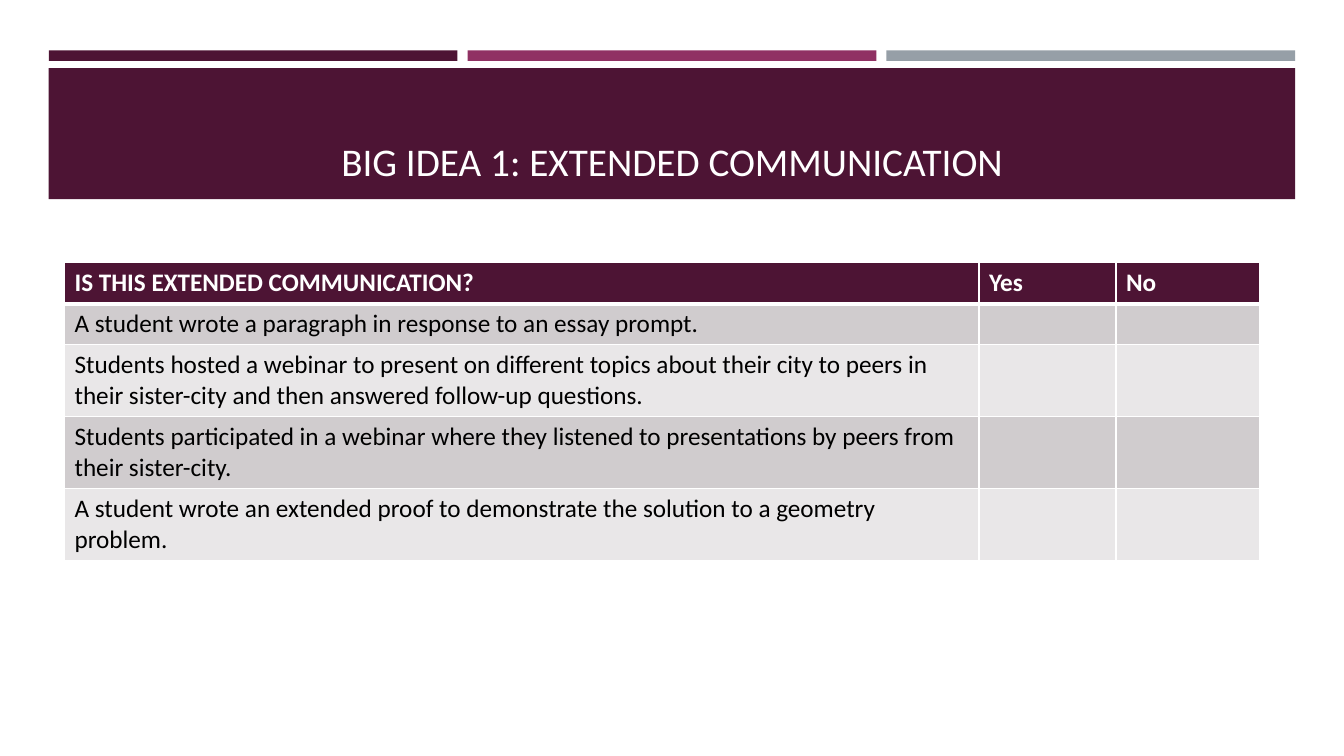
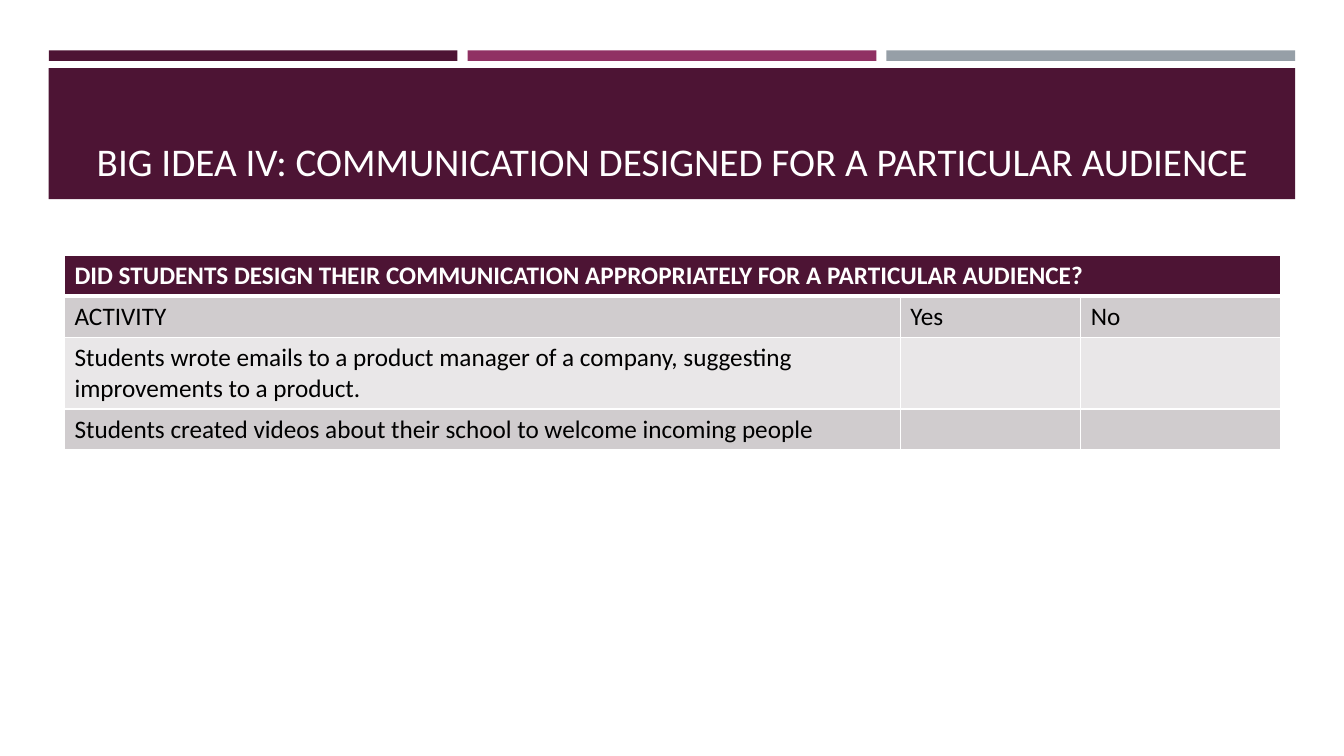
import dataclasses

import pptx
import pptx.dml.color
import pptx.enum.shapes
import pptx.enum.text
import pptx.oxml
import pptx.oxml.ns
import pptx.util


@dataclasses.dataclass(frozen=True)
class Theme:
    font: str = "Calibri"
    title_size: int = 28
    table_size: int = 18
    plum: str = "4D1434"
    magenta: str = "903163"
    slate: str = "969FA7"
    band_dark: str = "D0CCCE"
    band_light: str = "E9E7E8"
    white: str = "FFFFFF"
    black: str = "000000"
    thin_border: int = 1
    header_border: int = 3


theme = Theme()
rgb = pptx.dml.color.RGBColor.from_string

presentation = pptx.Presentation()
presentation.slide_width = pptx.util.Inches(13.33)
presentation.slide_height = pptx.util.Inches(7.5)

# The grid divides the slide into 100 columns and 100 rows.
COLUMN = presentation.slide_width / 100
ROW = presentation.slide_height / 100

BAND_LEFT = 3.63
BAND_WIDTH = 100 - 2 * BAND_LEFT
BAR_GAP = 0.75
BAR_WIDTH = (BAND_WIDTH - 2 * BAR_GAP) / 3
CONTENT_LEFT = 4.8
CONTENT_WIDTH = 100 - 2 * CONTENT_LEFT
LINE_HEIGHTS = {1: 5.43, 2: 9.5}

# Each table row holds its number of text lines and its cell texts.
slides = [
    {
        "title": "BIG IDEA 1: EXTENDED COMMUNICATION",
        "top": 34.75,
        "columns": [68.04, 10.2, 10.65],
        "rows": [
            (1, ["IS THIS EXTENDED COMMUNICATION?", "Yes", "No"]),
            (1, ["A student wrote a paragraph in response to an essay prompt."]),
            (2, ["Students hosted a webinar to present on different topics about their city "
                 "to peers in their sister-city and then answered follow-up questions."]),
            (2, ["Students participated in a webinar where they listened to presentations "
                 "by peers from their sister-city."]),
            (2, ["A student wrote an extended proof to demonstrate the solution to a "
                 "geometry problem."]),
        ],
    },
    {
        "title": "BIG IDEA IV: COMMUNICATION DESIGNED FOR A PARTICULAR AUDIENCE",
        "top": 33.75,
        "columns": [62.19, 13.43, 14.85],
        "rows": [
            (1, ["DID STUDENTS DESIGN THEIR COMMUNICATION APPROPRIATELY FOR A "
                 "PARTICULAR AUDIENCE?"]),
            (1, ["ACTIVITY", "Yes", "No"]),
            (2, ["Students wrote emails to a product manager of a company, suggesting "
                 "improvements to a product."]),
            (1, ["Students created videos about their school to welcome incoming people"]),
        ],
    },
]


def grid_box(left, top, width, height):
    """Turn grid columns and rows into slide lengths."""
    return int(left * COLUMN), int(top * ROW), int(width * COLUMN), int(height * ROW)


def style_cell(cell, row_index):
    is_header = row_index == 0
    properties = cell._tc.get_or_add_tcPr()
    for side in "LRTB":
        beside_header = (side == "B" and is_header) or (side == "T" and row_index == 1)
        points = theme.header_border if beside_header else theme.thin_border
        properties.append(pptx.oxml.parse_xml(
            f'<a:ln{side} {pptx.oxml.ns.nsdecls("a")} w="{pptx.util.Pt(points)}">'
            f'<a:solidFill><a:srgbClr val="{theme.white}"/></a:solidFill></a:ln{side}>'))
    band = theme.band_dark if row_index % 2 else theme.band_light
    cell.fill.solid()
    cell.fill.fore_color.rgb = rgb(theme.plum if is_header else band)
    font = cell.text_frame.paragraphs[0].font
    font.name = theme.font
    font.size = pptx.util.Pt(theme.table_size)
    font.bold = is_header
    font.color.rgb = rgb(theme.white if is_header else theme.black)


decorations = [
    (BAND_LEFT + index * (BAR_WIDTH + BAR_GAP), 6.67, BAR_WIDTH, 1.4, color)
    for index, color in enumerate([theme.plum, theme.magenta, theme.slate])
]
decorations.append((BAND_LEFT, 9, BAND_WIDTH, 17.33, theme.plum))

for content in slides:
    slide = presentation.slides.add_slide(presentation.slide_layouts[6])

    for *box, color in decorations:
        shape = slide.shapes.add_shape(
            pptx.enum.shapes.MSO_SHAPE.RECTANGLE, *grid_box(*box))
        shape.shadow.inherit = False
        shape.fill.solid()
        shape.fill.fore_color.rgb = rgb(color)
        shape.line.fill.background()

    title = slide.shapes.add_textbox(*grid_box(CONTENT_LEFT, 10.27, CONTENT_WIDTH, 14.8))
    title.text_frame.word_wrap = True
    title.text_frame.vertical_anchor = pptx.enum.text.MSO_ANCHOR.BOTTOM
    paragraph = title.text_frame.paragraphs[0]
    paragraph.text = content["title"]
    paragraph.alignment = pptx.enum.text.PP_ALIGN.CENTER
    paragraph.font.name = theme.font
    paragraph.font.size = pptx.util.Pt(theme.title_size)
    paragraph.font.color.rgb = rgb(theme.white)

    rows, columns = content["rows"], content["columns"]
    heights = [LINE_HEIGHTS[lines] for lines, texts in rows]
    table = slide.shapes.add_table(
        len(rows), len(columns),
        *grid_box(CONTENT_LEFT, content["top"], sum(columns), sum(heights))).table
    table.horz_banding = False
    for column, width in zip(table.columns, columns):
        column.width = int(width * COLUMN)
    for row_index, (lines, texts) in enumerate(rows):
        table.rows[row_index].height = int(heights[row_index] * ROW)
        for column_index, text in enumerate(texts):
            table.cell(row_index, column_index).text = text
        for cell in table.rows[row_index].cells:
            style_cell(cell, row_index)
    if len(rows[0][1]) == 1:
        table.cell(0, 0).merge(table.cell(0, len(columns) - 1))

presentation.save("out.pptx")
